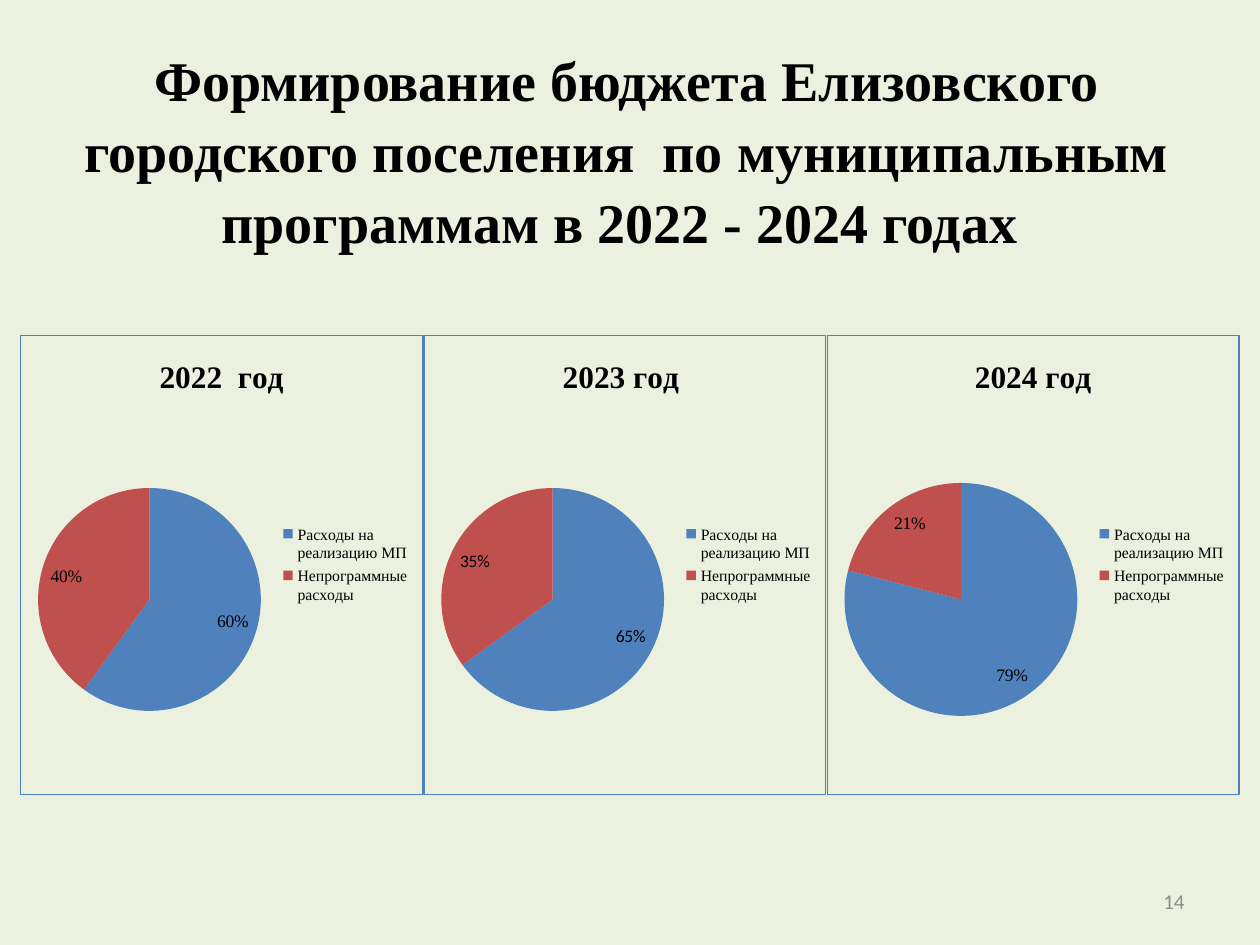
from dataclasses import dataclass

from lxml.etree import SubElement
from pptx import Presentation
from pptx.chart.data import CategoryChartData
from pptx.dml.color import RGBColor
from pptx.enum.chart import XL_CHART_TYPE, XL_LABEL_POSITION, XL_LEGEND_POSITION
from pptx.enum.text import MSO_ANCHOR, PP_ALIGN
from pptx.oxml.ns import qn
from pptx.util import Inches, Pt

BACKGROUND = RGBColor(0xEB, 0xF1, 0xDE)
BLACK = RGBColor(0, 0, 0)
GREY = RGBColor(0x8C, 0x8C, 0x8C)
BLUE = RGBColor(0x4F, 0x81, 0xBD)
RED = RGBColor(0xC0, 0x50, 0x4D)
SERIF, SANS = "Times New Roman", "Calibri"

CATEGORIES = ("Расходы на реализацию МП", "Непрограммные расходы")
CHART_LEFT, CHART_TOP, COLUMN, CHART_HEIGHT = 0.16, 2.66, 3.2, 3.65


@dataclass
class YearBudget:
    title: str
    program_share: int
    label_font: str = SERIF
    width: float = COLUMN


YEARS = (
    YearBudget("2022  год", 60),
    YearBudget("2023 год ", 65, label_font=SANS),
    YearBudget("2024 год", 79, width=3.28),
)


def style_font(font, size: float, name: str, color: RGBColor = BLACK, bold: bool = False) -> None:
    font.size, font.name, font.bold = Pt(size), name, bold
    font.color.rgb = color


def add_border(chart, color: RGBColor, width: float) -> None:
    """Outline the chart area and leave it unfilled."""
    props = chart.element.makeelement(qn("c:spPr"))
    SubElement(props, qn("a:noFill"))
    line = SubElement(props, qn("a:ln"), w=str(Pt(width)))
    fill = SubElement(line, qn("a:solidFill"))
    SubElement(fill, qn("a:srgbClr"), val=str(color))
    chart.element.find(qn("c:chart")).addnext(props)


def add_year_pie(s, column: int, year: YearBudget) -> None:
    data = CategoryChartData()
    data.categories = CATEGORIES
    data.add_series(year.title, (year.program_share, 100 - year.program_share))
    chart = s.shapes.add_chart(
        XL_CHART_TYPE.PIE,
        Inches(CHART_LEFT + column * COLUMN), Inches(CHART_TOP),
        Inches(year.width), Inches(CHART_HEIGHT), data,
    ).chart
    style_font(chart.font, 10, year.label_font)
    add_border(chart, BLUE, 0.75)

    # Chart title and legend
    chart.has_title = True
    tf = chart.chart_title.text_frame
    tf.text = year.title
    style_font(tf.paragraphs[0].runs[0].font, 18, SERIF, bold=True)
    chart.chart_title.include_in_layout = False
    chart.has_legend = True
    chart.legend.position = XL_LEGEND_POSITION.RIGHT
    chart.legend.include_in_layout = False
    style_font(chart.legend.font, 9, SERIF)

    # Slices and percentages
    plot = chart.plots[0]
    plot.vary_by_categories = True
    for i, color in enumerate((BLUE, RED)):
        fill = plot.series[0].points[i].format.fill
        fill.solid()
        fill.fore_color.rgb = color
    plot.has_data_labels = True
    labels = plot.data_labels
    labels.show_percentage, labels.show_value = True, False
    labels.number_format, labels.number_format_is_linked = "0%", False
    labels.position = XL_LABEL_POSITION.INSIDE_END
    style_font(labels.font, 10, year.label_font)


def set_text(sp, text: str, align: PP_ALIGN) -> tuple:
    tf = sp.text_frame
    tf.word_wrap = True
    tf.vertical_anchor = MSO_ANCHOR.MIDDLE
    tf.text = text
    p = tf.paragraphs[0]
    p.alignment = align
    return p, p.runs[0]


def main() -> None:
    prs = Presentation()
    prs.slide_width, prs.slide_height = Inches(10), Inches(7.5)
    s = prs.slides.add_slide(prs.slide_layouts[5])
    s.background.fill.solid()
    s.background.fill.fore_color.rgb = BACKGROUND

    # Slide title
    sp = s.shapes.title
    sp.left, sp.top, sp.width, sp.height = map(Inches, (0.31, 0.16, 9.33, 2.03))
    p, r = set_text(
        sp,
        "Формирование бюджета Елизовского городского поселения  "
        "по муниципальным программам в 2022 - 2024 годах ",
        PP_ALIGN.CENTER,
    )
    p.line_spacing = 1.06
    style_font(r.font, 32, SERIF, bold=True)

    # One pie per year
    for column, year in enumerate(YEARS):
        add_year_pie(s, column, year)

    # Page number
    sp = s.shapes.add_textbox(*map(Inches, (7.17, 6.95, 2.33, 0.4)))
    p, r = set_text(sp, "14", PP_ALIGN.RIGHT)
    style_font(r.font, 12, SANS, GREY)

    prs.save("out.pptx")


if __name__ == "__main__":
    main()
